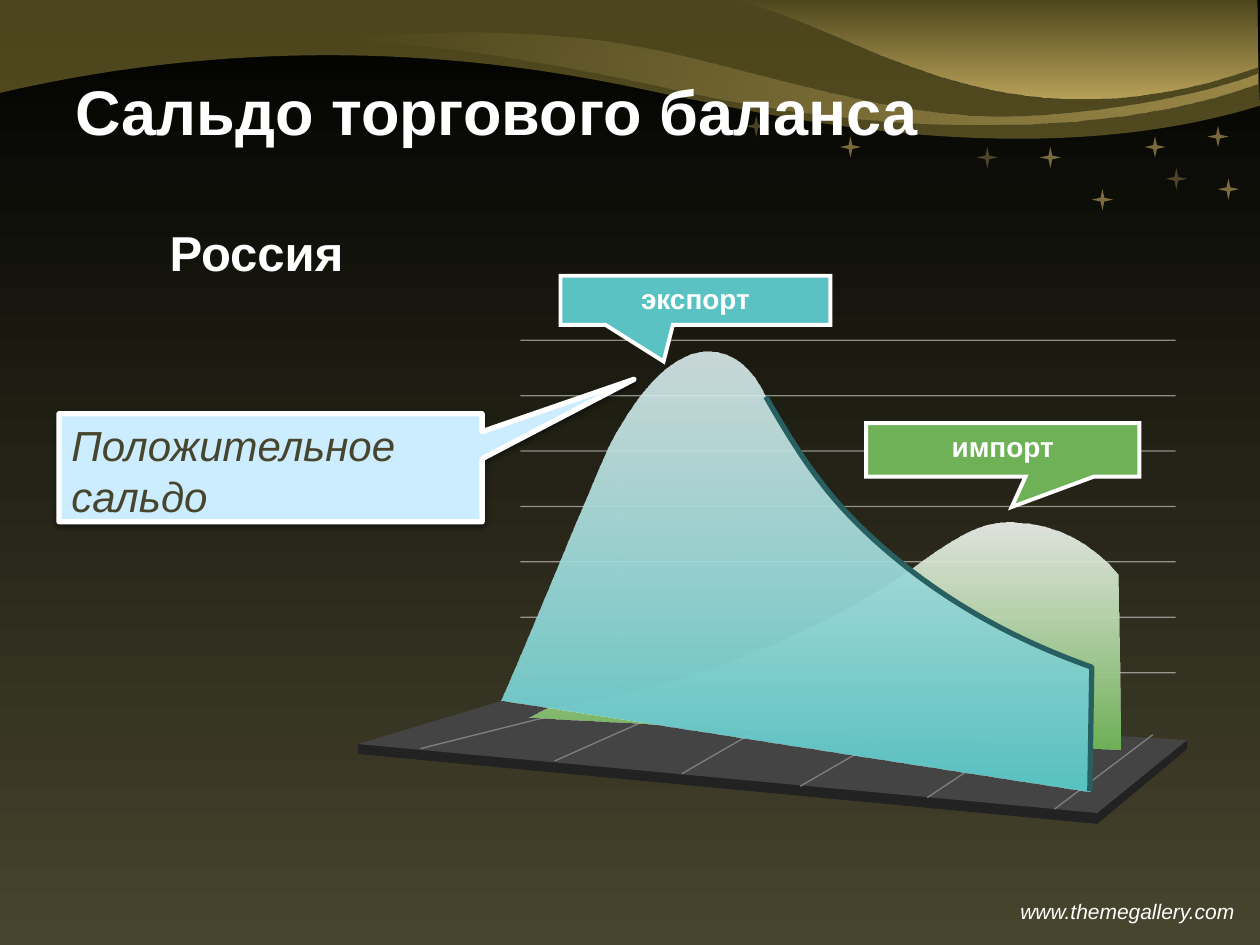
"""Build the trade balance slide with export and import hills."""
from dataclasses import dataclass

from lxml import etree
from pptx import Presentation
from pptx import util as u
from pptx.dml.color import RGBColor
from pptx.enum import shapes, text
from pptx.oxml.ns import qn


@dataclass(frozen=True)
class Theme:
    font: str = "Arial"
    title: int = 36
    country: int = 28
    remark: int = 24
    label: int = 16
    address: int = 12
    white: str = "FFFFFF"
    black: str = "000000"
    olive: str = "47452D"
    wave: str = "988B3A"
    gold: str = "E8C972"
    teal: str = "5AC2C2"
    teal_light: str = "DCEEEE"
    teal_dark: str = "285F60"
    green: str = "6FB157"
    green_light: str = "F6F9F5"
    floor: str = "444444"
    floor_side: str = "222222"
    floor_line: str = "808080"
    sky: str = "CCECFF"


def paint(fill, *colors, angle=0):
    """Fill with one (colour, opacity) pair, or with a gradient of two."""
    if len(colors) == 1:
        fill.solid()
        targets = [fill.fore_color]
    else:
        fill.gradient()
        fill.gradient_angle = angle
        targets = [stop.color for stop in fill.gradient_stops]
    for target, (rgb, _) in zip(targets, colors):
        target.rgb = RGBColor.from_string(rgb)
    for node, (_, opacity) in zip(list(fill._xPr.iter(qn("a:srgbClr"))), colors):
        if opacity < 100:
            etree.SubElement(node, qn("a:alpha"), val=str(opacity * 1000))


def outline(start, *segments, close=True):
    """Draw a freeform from points and cubic curves given in centimetres."""
    points = [start]
    for segment in segments:
        points += zip(segment[::2], segment[1::2])
    points = [(x * 100, y * 100) for x, y in points]
    builder = slide.shapes.build_freeform(*points[0], scale=u.Cm(0.01))
    builder.add_line_segments(points[1:], close=close)
    shape = builder.convert_to_shape()
    contour = next(shape._element.iter(qn("a:path")))
    steps = iter(contour.findall(qn("a:lnTo")))
    for segment in segments:
        step = next(steps)
        if len(segment) == 6:
            step.tag = qn("a:cubicBezTo")
            for extra in (next(steps), next(steps)):
                step.append(extra[0])
                contour.remove(extra)
    shape.shadow.inherit = False
    shape.line.fill.background()
    return shape


theme = Theme()
prs = Presentation()
prs.slide_width, prs.slide_height = u.Cm(25.4), u.Cm(19.05)
slide = prs.slides.add_slide(prs.slide_layouts[6])
paint(slide.background.fill, (theme.black, 100), (theme.olive, 100), angle=270)

back_wave = outline((-0.03, 1.88), (6.83, 0.28, 12.09, 1.63, 13.72, 1.96),
                    (15.32, 2.26, 20.7, 3.58, 25.4, 2.13), (25.4, 2.13, 25.35, 0.84, 25.35, -0.03),
                    (12.62, -0.03, -0.03, -0.05, -0.03, -0.05), (-0.03, 0.64, -0.03, 1.19, -0.03, 1.88))
paint(back_wave.fill, (theme.wave, 50))
ribbon = outline((9.91, 1.09), (11.89, 1.42, 12.9, 1.63, 13.74, 1.83),
                 (14.55, 2.01, 20.73, 3.35, 25.35, 1.68), (25.35, 1.68, 25.35, 1.73, 25.35, 1.47),
                 (24.41, 1.85, 21.72, 2.44, 19.51, 2.31), (17.3, 2.21, 14.17, 1.07, 12.09, 0.81),
                 (9.98, 0.56, 8.1, 0.64, 6.93, 0.79), (6.96, 0.81, 8.1, 0.84, 9.91, 1.09))
paint(ribbon.fill, (theme.gold, 0), (theme.gold, 50))
corner = outline((25.35, -0.03), (25.35, 0.66, 25.35, 1.35, 25.35, 1.35),
                 (20.02, 3.23, 17.22, 0.46, 14.66, -0.03), (14.66, -0.03, 20.02, -0.03, 25.35, -0.03))
paint(corner.fill, (theme.gold, 0), (theme.gold, 70), angle=270)

for x, y, opacity in [(22.01, 3.81, 50), (15.03, 2.33, 30), (23.5, 3.39, 30),
                      (20.96, 2.96, 50), (16.93, 2.75, 50), (24.55, 3.6, 50),
                      (24.34, 2.54, 50), (23.07, 2.75, 50), (19.69, 2.96, 30)]:
    star = slide.shapes.add_shape(shapes.MSO_SHAPE.STAR_4_POINT,
                                  u.Cm(x), u.Cm(y), u.Cm(0.43), u.Cm(0.43))
    star.adjustments[0] = 0.125
    star.shadow.inherit = False
    star.line.fill.background()
    paint(star.fill, (theme.gold, opacity))

floor_side = outline((7.22, 15), (23.93, 14.92), (23.93, 15.1), (22.12, 16.61), (7.22, 15.2))
paint(floor_side.fill, (theme.floor_side, 100))
floor = outline((7.22, 15), (10.18, 14.11), (23.93, 14.92), (22.12, 16.39))
paint(floor.fill, (theme.floor, 100))

wall_heights = [6.86 + 6.7 * i / 6 for i in range(7)]
wall_lines = [(10.49, y, 23.7, y, theme.white, 50) for y in wall_heights]
floor_lines = [(*ends, theme.floor_line, 100) for ends in [
    (8.48, 15.09, 12.24, 14.15), (13.74, 15.6, 16.13, 14.22), (16.13, 15.85, 18.24, 14.63),
    (18.69, 16.08, 20.73, 14.73), (21.26, 16.31, 23.24, 14.81), (11.18, 15.34, 13.97, 14.1)]]
for *ends, color, opacity in wall_lines + floor_lines:
    grid_line = slide.shapes.add_connector(shapes.MSO_CONNECTOR.STRAIGHT, *map(u.Cm, ends))
    grid_line.line.width = u.Pt(0.75)
    paint(grid_line.line.fill, (color, opacity))
    etree.SubElement(grid_line._element.spPr, qn("a:effectLst"))

import_hill = outline((10.68, 14.47), (11.05, 14.27), (13.5, 14, 16.5, 12.8, 18.35, 11.49),
                      (19.1, 10.95, 19.6, 10.56, 20.26, 10.54),
                      (21.2, 10.5, 22, 10.95, 22.52, 11.59), (22.58, 15.12))
paint(import_hill.fill, (theme.green_light, 90), (theme.green, 100), angle=270)
export_fall = [(16.3, 9.5, 16.9, 10.35, 18.35, 11.49),
               (19.4, 12.3, 20.6, 12.95, 22.01, 13.45), (21.97, 15.95)]
export_hill = outline((10.12, 14.11), (11, 12.1, 11.7, 10.3, 12.3, 8.97),
                      (12.95, 7.75, 13.6, 7.08, 14.31, 7.08),
                      (14.8, 7.08, 15.2, 7.45, 15.44, 8), *export_fall)
paint(export_hill.fill, (theme.teal_light, 90), (theme.teal, 100), angle=270)
export_edge = outline((15.44, 8), *export_fall, close=False)
export_edge.fill.background()
export_edge.line.width = u.Pt(3)
paint(export_edge.line.fill, (theme.teal_dark, 100))

callouts = []
for box, tip, color, border in [
        ((11.3, 5.56, 5.44, 0.99), (-0.118, 1.246), theme.teal, 2.25),
        ((17.46, 8.53, 5.51, 1.08), (0.033, 1.066), theme.green, 2.25),
        ((1.19, 8.34, 8.53, 2.18), (0.859, -0.818), theme.sky, 3)]:
    callout = slide.shapes.add_shape(shapes.MSO_SHAPE.RECTANGULAR_CALLOUT, *map(u.Cm, box))
    callout.adjustments[0], callout.adjustments[1] = tip
    callout.shadow.inherit = False
    paint(callout.fill, (color, 100))
    callout.line.width = u.Pt(border)
    paint(callout.line.fill, (theme.white, 100))
    callouts.append(callout)
export_label, import_label, remark = callouts
for label in (export_label, import_label):
    etree.SubElement(label._element.spPr.find(qn("a:ln")), qn("a:miter"), lim="800000")

shadow = etree.SubElement(remark._element.spPr.find(qn("a:effectLst")), qn("a:outerShdw"),
                          blurRad=str(u.Pt(3.1)), dist=str(u.Pt(1.6)), dir="5400000", rotWithShape="0")
shade = etree.SubElement(shadow, qn("a:srgbClr"), val=theme.black)
etree.SubElement(shade, qn("a:alpha"), val="38000")

title = slide.shapes.add_textbox(u.Cm(1.27), u.Cm(0.85), u.Cm(19.25), u.Cm(2.75))
country = slide.shapes.add_textbox(u.Cm(3.17), u.Cm(4.37), u.Cm(5.56), u.Cm(1.45))
address = slide.shapes.add_textbox(u.Cm(20.32), u.Cm(17.98), u.Cm(4.88), u.Cm(0.76))
top, middle = text.MSO_ANCHOR.TOP, text.MSO_ANCHOR.MIDDLE
left, center = text.PP_ALIGN.LEFT, text.PP_ALIGN.CENTER
for holder, words, size, color, italic, align, anchor in [
        (title, "Сальдо торгового баланса", theme.title, theme.white, False, left, middle),
        (country, "Россия", theme.country, theme.white, False, left, top),
        (address, "www.themegallery.com", theme.address, theme.white, True, left, top),
        (export_label, "экспорт", theme.label, theme.white, False, center, top),
        (import_label, "импорт", theme.label, theme.white, False, center, top),
        (remark, "Положительное сальдо", theme.remark, theme.olive, True, left, top)]:
    frame = holder.text_frame
    frame.word_wrap = holder is not address
    frame.vertical_anchor = anchor
    paragraph = frame.paragraphs[0]
    paragraph.alignment = align
    run = paragraph.add_run()
    run.text = words
    run.font.name, run.font.size = theme.font, u.Pt(size)
    run.font.bold, run.font.italic = not italic, italic
    run.font.color.rgb = RGBColor.from_string(color)

prs.save("out.pptx")
